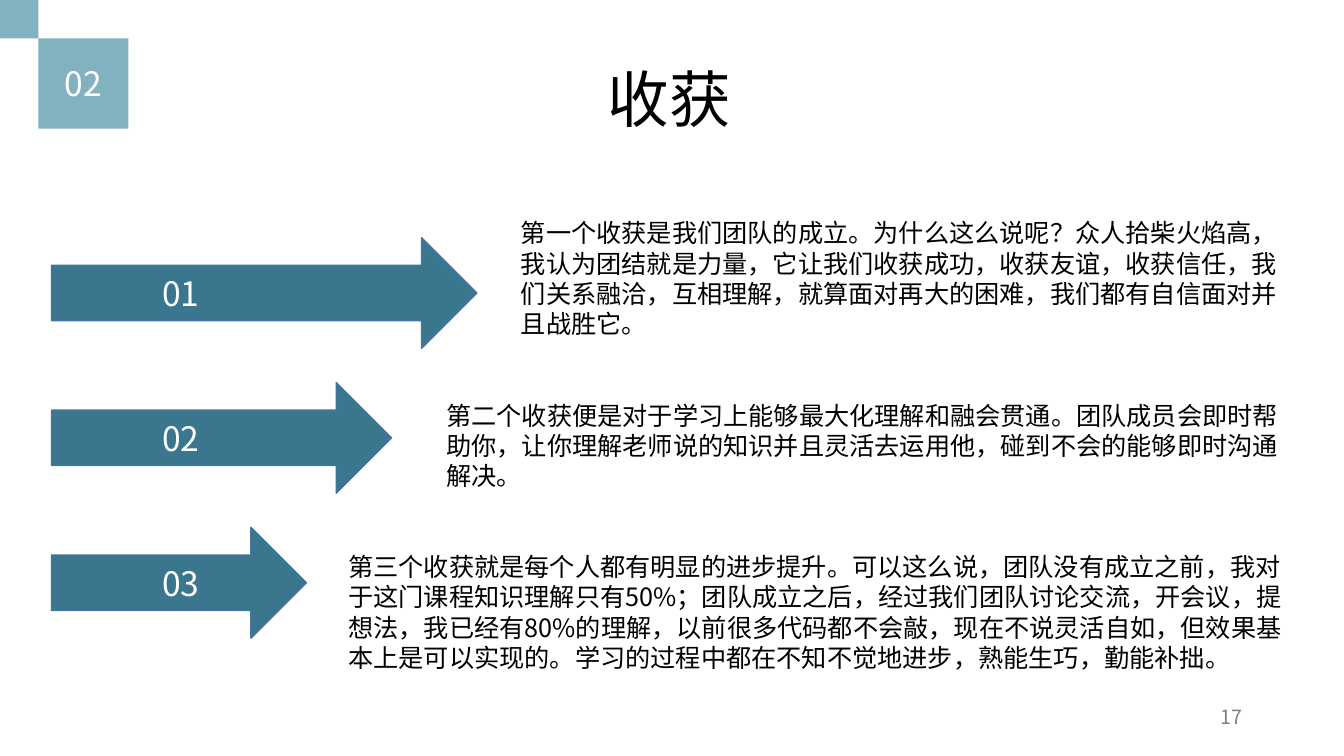
"""Build the slide on the three gains of the team."""
import pptx
import pptx.dml.color
import pptx.enum.shapes
import pptx.enum.text
import pptx.oxml.ns
import pptx.util
import lxml.etree

Cm = pptx.util.Cm
Pt = pptx.util.Pt
Kind = pptx.enum.shapes.MSO_SHAPE
Align = pptx.enum.text.PP_ALIGN
Anchor = pptx.enum.text.MSO_ANCHOR


class Deck:
    """Hold the style and the current slide."""

    font = "Noto Sans CJK SC"
    colors = {
        "light": "82B1C0",
        "arrow": "3A778E",
        "edge": "43739E",
        "white": "FFFFFF",
        "black": "000000",
        "gray": "808080",
    }

    def __init__(self):
        """Start a wide deck with one blank slide."""
        self.show = pptx.Presentation()
        self.show.slide_width = Cm(33.87)
        self.show.slide_height = Cm(19.05)
        self.slide = self.show.slides.add_slide(self.show.slide_layouts[6])

    def color(self, name):
        """Return the named color."""
        return pptx.dml.color.RGBColor.from_string(self.colors[name])

    def label(self, shape, text, size, color, align=Align.LEFT):
        """Add one run of text to a shape."""
        shape.text_frame.word_wrap = True
        line = shape.text_frame.paragraphs[0]
        line.alignment = align
        run = line.add_run()
        run.text = text
        run.font.size = Pt(size)
        run.font.name = self.font
        run.font.color.rgb = self.color(color)
        east = lxml.etree.SubElement(
            run.font._element, pptx.oxml.ns.qn("a:ea"))
        east.set("typeface", self.font)

    def shape(self, kind, box, fill, edge=None):
        """Add a filled preset shape."""
        shape = self.slide.shapes.add_shape(kind, *map(Cm, box))
        shape.shadow.inherit = False
        shape.fill.solid()
        shape.fill.fore_color.rgb = self.color(fill)
        if edge:
            shape.line.color.rgb = self.color(edge)
            shape.line.width = Pt(1)
        else:
            shape.line.fill.background()
        shape.text_frame.vertical_anchor = Anchor.MIDDLE
        return shape

    def arrow(self, box, text):
        """Add an arrow with an indented label."""
        arrow = self.shape(Kind.RIGHT_ARROW, box, "arrow", "edge")
        arrow.text_frame.margin_left = Cm(2.79)
        self.label(arrow, text, 24, "white")

    def text(self, box, text, size, color="black", align=Align.LEFT):
        """Add a text box."""
        frame = self.slide.shapes.add_textbox(*map(Cm, box))
        self.label(frame, text, size, color, align)


GAINS = [
    ((12.88, 5.36, 19.96, 4.11),
     "第一个收获是我们团队的成立。为什么这么说呢？众人拾柴火焰高，"
     "我认为团结就是力量，它让我们收获成功，收获友谊，收获信任，"
     "我们关系融洽，互相理解，就算面对再大的困难，我们都有自信面对并且战胜它。"),
    ((11, 9.96, 21.56, 3.33),
     "第二个收获便是对于学习上能够最大化理解和融会贯通。"
     "团队成员会即时帮助你，让你理解老师说的知识并且灵活去运用他，"
     "碰到不会的能够即时沟通解决。"),
    ((8.53, 13.77, 24.33, 4.11),
     "第三个收获就是每个人都有明显的进步提升。可以这么说，团队没有成立之前，"
     "我对于这门课程知识理解只有50%；团队成立之后，经过我们团队讨论交流，"
     "开会议，提想法，我已经有80%的理解，以前很多代码都不会敲，"
     "现在不说灵活自如，但效果基本上是可以实现的。"
     "学习的过程中都在不知不觉地进步，熟能生巧，勤能补拙。"),
]


def main():
    """Draw the slide and save it."""
    deck = Deck()
    deck.shape(Kind.RECTANGLE, (0, 0, 0.97, 0.97), "light")
    badge = deck.shape(Kind.RECTANGLE, (0.97, 0.97, 2.27, 2.27), "light")
    deck.label(badge, "02", 24, "white", Align.CENTER)
    deck.text((4.37, 1.42, 24.99, 2.13), "收获", 44, align=Align.CENTER)
    for i, (box, gain) in enumerate(GAINS):
        deck.arrow((1.3, 5.99 + 3.65 * i, 10.72 - 2.15 * i, 2.79), f"{i + 1:02}")
        deck.text(box, gain, 18)
    deck.text((23.93, 17.65, 7.62, 1.02), "17", 14, "gray", Align.RIGHT)
    deck.show.save("out.pptx")


if __name__ == "__main__":
    main()
